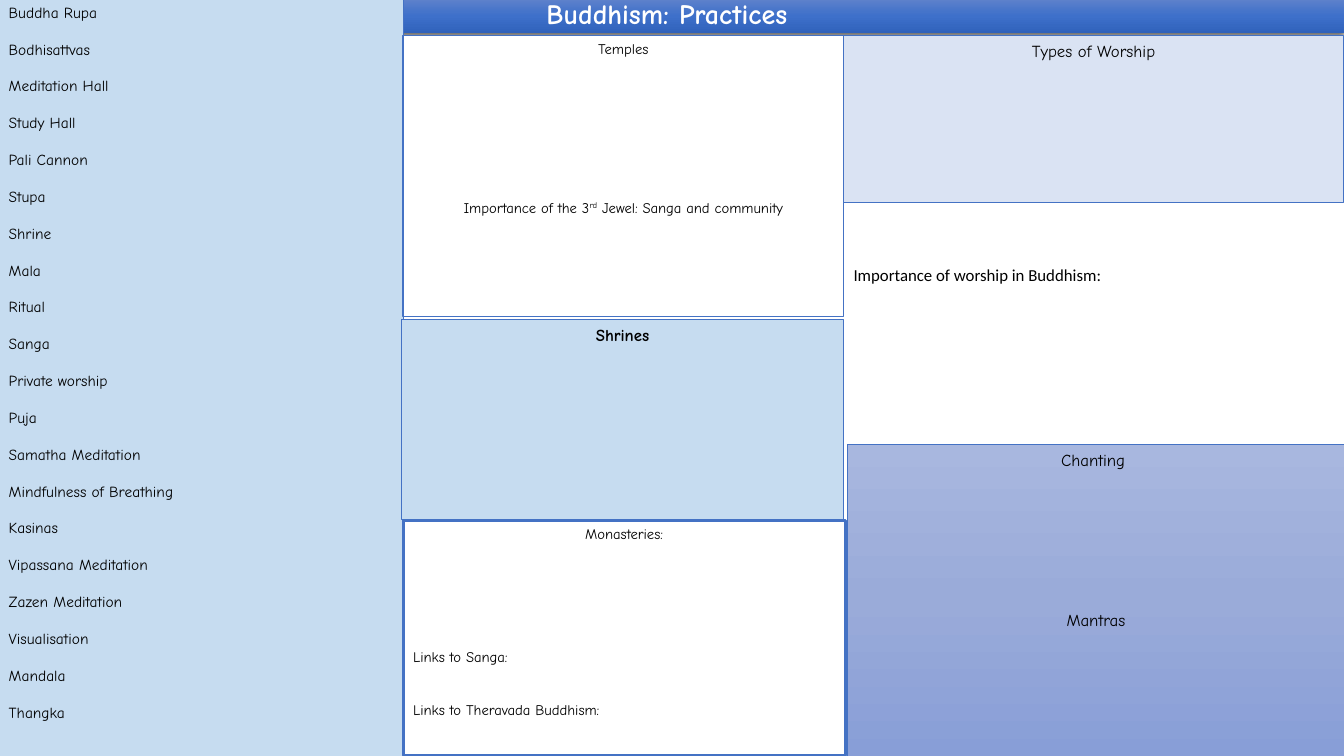
import pptx
import pptx.util
import pptx.dml.color
import pptx.enum.shapes
import pptx.enum.text
import pptx.oxml.ns
from lxml import etree
from pptx.util import Cm, Pt

COLOURS = {
    "text": "000000",
    "title text": "FFFFFF",
    "border": "4472C4",
    "white": "FFFFFF",
    "sky": "C6DCF0",
    "pale": "DAE3F3",
}
TITLE_GRADIENT = ("6183CB", "3E70CA", "3062BB")
CHANTING_GRADIENT = ("A8B7DF", "9AABD9", "889ED7")
FONT = "Comic Neue"
LINE_HEIGHT = 1.195  # height of a text line relative to its font size
CENTER = pptx.enum.text.PP_ALIGN.CENTER
LEFT = pptx.enum.text.PP_ALIGN.LEFT

KEY_WORDS = [
    "Buddha Rupa", "Bodhisattvas", "Meditation Hall", "Study Hall",
    "Pali Cannon", "Stupa", "Shrine", "Mala", "Ritual", "Sanga",
    "Private worship", "Puja", "Samatha Meditation",
    "Mindfulness of Breathing", "Kasinas", "Vipassana Meditation",
    "Zazen Meditation", "Visualisation", "Mandala", "Thangka",
]


def rgb(name):
    return pptx.dml.color.RGBColor.from_string(COLOURS[name])


def add_element(parent, tag, **attributes):
    return etree.SubElement(parent, pptx.oxml.ns.qn(tag), **attributes)


def fill_gradient(shape, stops):
    """Fill from top to bottom with evenly spaced colours."""
    shape.fill.gradient()
    shape.fill.gradient_angle = 270
    stop_list = shape._element.spPr.find(".//" + pptx.oxml.ns.qn("a:gsLst"))
    for stop in list(stop_list):
        stop_list.remove(stop)
    for index, colour in enumerate(stops):
        position = 100000 * index // (len(stops) - 1)
        stop = add_element(stop_list, "a:gs", pos=str(position))
        add_element(stop, "a:srgbClr", val=colour)


def add_panel(slide, box, fill, line_width):
    """Add a rectangle; fill is a colour name or a tuple of gradient stops."""
    shape = slide.shapes.add_shape(
        pptx.enum.shapes.MSO_SHAPE.RECTANGLE, *map(Cm, box))
    shape.shadow.inherit = False
    if isinstance(fill, tuple):
        fill_gradient(shape, fill)
    else:
        shape.fill.solid()
        shape.fill.fore_color.rgb = rgb(fill)
    if line_width:
        shape.line.color.rgb = rgb("border")
        shape.line.width = Pt(line_width)
    else:
        shape.line.fill.background()
    shape.text_frame.word_wrap = True
    shape.text_frame.vertical_anchor = pptx.enum.text.MSO_ANCHOR.TOP
    return shape


def write_lines(shape, lines, size, font=FONT, colour="text", bold=False):
    """Write (text, alignment, lines of space before) tuples as paragraphs."""
    frame = shape.text_frame
    for index, (text, alignment, space) in enumerate(lines):
        paragraph = frame.add_paragraph() if index else frame.paragraphs[0]
        paragraph.alignment = alignment
        paragraph.space_before = Pt(round(space * size * LINE_HEIGHT, 1))
        paragraph.font.name = font
        paragraph.font.size = Pt(size)
        paragraph.font.bold = bold
        paragraph.font.color.rgb = rgb(colour)
        for part, piece in enumerate(text.split("^")):
            run = paragraph.add_run()
            run.text = piece
            if part % 2:
                run.font._element.set("baseline", "30000")


def add_title(slide, box):
    shape = add_panel(slide, box, TITLE_GRADIENT, 0)
    effects = shape._element.spPr.find(pptx.oxml.ns.qn("a:effectLst"))
    shadow = add_element(effects, "a:outerShdw", blurRad=str(Pt(4.5)),
                         dist=str(Pt(1.5)), dir="5400000", algn="ctr",
                         rotWithShape="0")
    shade = add_element(shadow, "a:srgbClr", val="000000")
    add_element(shade, "a:alpha", val="63000")
    shape.text_frame.vertical_anchor = pptx.enum.text.MSO_ANCHOR.MIDDLE
    write_lines(shape, [("Buddhism: Practices ", CENTER, 0)], 20,
                colour="title text", bold=True)
    shape.text_frame.paragraphs[0].line_spacing = 0.9


def add_key_words(slide, box):
    shape = add_panel(slide, box, "sky", 0.5)
    lines = [(word, LEFT, 1 if index else 0)
             for index, word in enumerate(KEY_WORDS)]
    write_lines(shape, lines, 11)


def add_places(slide, left, top, width):
    """Stack temples, shrines and monasteries in one column."""
    temples = add_panel(slide, (left, top, width, 7.09), "white", 1)
    write_lines(temples, [
        ("Temples", CENTER, 0),
        ("Importance of the 3^rd^ Jewel: Sanga and community", CENTER, 8),
    ], 10.5)
    shrines = add_panel(
        slide, (left - 0.04, top + 7.16, width + 0.04, 5.05), "sky", 0.5)
    write_lines(shrines, [("Shrines", CENTER, 0)], 12, bold=True)
    monasteries = add_panel(
        slide, (left, top + 12.22, width + 0.04, 5.94), "white", 2.25)
    write_lines(monasteries, [
        ("Monasteries:", CENTER, 0),
        ("Links to Sanga:", LEFT, 6),
        ("Links to Theravada Buddhism:", LEFT, 2),
    ], 10.5)


def add_worship(slide, left, top, width):
    """Stack chanting, types and importance of worship in one column."""
    chanting = add_panel(slide, (left + 0.1, top + 10.31, width - 0.08, 7.85),
                         CHANTING_GRADIENT, 0.5)
    write_lines(chanting, [("Chanting ", CENTER, 0), ("Mantras", CENTER, 7)], 12)
    types = add_panel(slide, (left, top, width, 4.22), "pale", 1)
    write_lines(types, [("Types of Worship", CENTER, 0)], 12)
    importance = slide.shapes.add_textbox(
        Cm(left), Cm(top + 5.66), Cm(width - 0.08), Cm(0.77))
    importance.text_frame.word_wrap = True
    write_lines(importance, [("Importance of worship in Buddhism:", LEFT, 0)],
                12, font="Calibri")


def main():
    presentation = pptx.Presentation()
    presentation.slide_width = Cm(33.87)
    presentation.slide_height = Cm(19.05)
    slide = presentation.slides.add_slide(presentation.slide_layouts[6])
    add_title(slide, (0, -0.05, 33.87, 0.89))
    add_key_words(slide, (-0.03, -0.05, 10.19, 19.1))
    add_places(slide, 10.16, 0.89, 11.1)
    add_worship(slide, 21.26, 0.89, 12.6)
    presentation.save("out.pptx")


if __name__ == "__main__":
    main()
